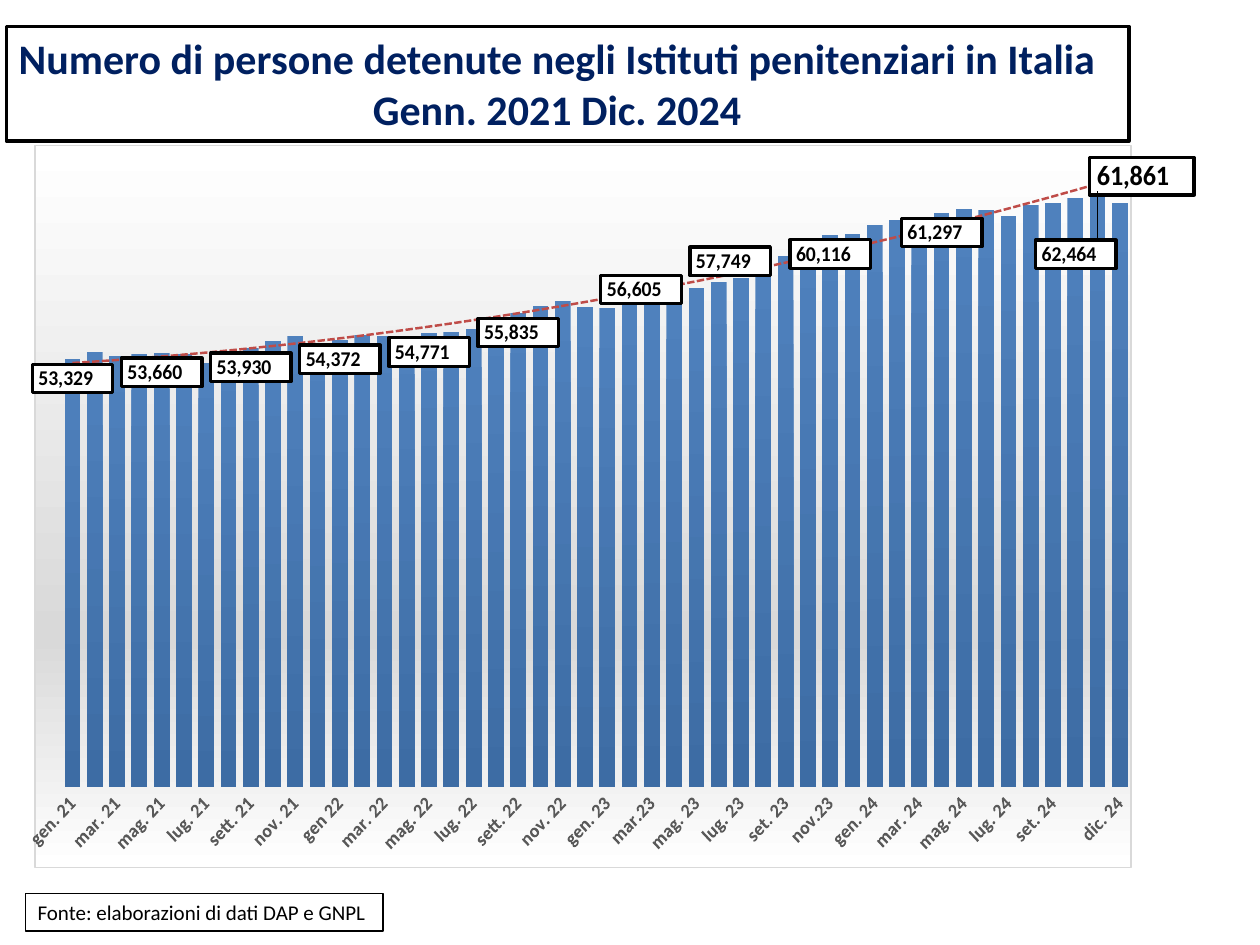
"""Build a slide charting the prison population in Italy, 2021 to 2024."""
from dataclasses import dataclass

from lxml.etree import _Element as Element
from pptx import Presentation
from pptx.chart.chart import Chart
from pptx.chart.data import CategoryChartData
from pptx.dml.color import RGBColor
from pptx.enum.chart import XL_CHART_TYPE as ChartType
from pptx.enum.chart import XL_LABEL_POSITION as LabelPos
from pptx.enum.chart import XL_TICK_MARK as Tick
from pptx.enum.shapes import MSO_SHAPE as Shape
from pptx.enum.text import MSO_ANCHOR as Anchor
from pptx.enum.text import MSO_AUTO_SIZE as AutoSize
from pptx.enum.text import PP_ALIGN as Align
from pptx.oxml import parse_xml
from pptx.oxml.ns import nsdecls, qn
from pptx.util import Pt

FONT = "Calibri"
NUMBER_FORMAT = r'_-* #,##0\ _€_-;\-* #,##0\ _€_-;_-* "-"?'
NS = nsdecls("a", "c")

MONTHS = {
    0: "gen. 21", 2: "mar. 21", 4: "mag. 21", 6: "lug. 21", 8: "sett. 21", 10: "nov. 21",
    12: "gen 22", 14: "mar. 22", 16: "mag. 22", 18: "lug. 22", 20: "sett. 22", 22: "nov. 22",
    24: "gen. 23", 26: "mar.23", 28: "mag. 23", 30: "lug. 23", 32: "set. 23", 34: "nov.23",
    36: "gen. 24", 38: "mar. 24", 40: "mag. 24", 42: "lug. 24", 44: "set. 24", 47: "dic. 24",
}
DETAINED = [
    53329, 53697, 53509, 53608, 53660, 53637, 53129, 53557, 53930, 54307, 54593, 54134,
    54372, 54635, 54609, 54595, 54771, 54841, 54979, 55637, 55835, 56225, 56524, 56196,
    56127, 56319, 56605, 56674, 57230, 57525, 57749, 58428, 58987, 59715, 60116, 60166,
    60637, 60924, 61049, 61297, 61547, 61480, 61133, 61758, 61862, 62110, 62464, 61861,
]


@dataclass
class Label:
    idx: int
    dx: float = 0
    dy: float = 0
    size: int = 12


@dataclass
class Box:
    left: float
    top: float
    width: float
    height: float
    lines: list[str]
    size: int
    color: str
    bold: bool
    border: float


LABELS = [Label(i) for i in (0, 4, 8, 12, 16, 20, 34, 39)] + [
    Label(26, -0.01, -0.04),
    Label(30, -0.01, -0.05),
    Label(46, -0.02, 0.06),
    Label(47, 0.02, -0.07, 16),
]
BOXES = [
    Box(3.6, 15.1, 641.5, 65.5,
        ["Numero di persone detenute negli Istituti penitenziari in Italia",
         "Genn. 2021 Dic. 2024"], 24, "002060", True, 2),
    Box(14.4, 510.5, 204.5, 21.6,
        ["Fonte: elaborazioni di dati DAP e GNPL"], 12, "000000", False, 0.75),
]


def rgb(color: str) -> RGBColor:
    return RGBColor.from_string(color)


def solid(color: str) -> str:
    return f'<a:solidFill><a:srgbClr val="{color}"/></a:solidFill>'


def line(color: str, width: float, extra: str = "") -> str:
    return f'<a:ln w="{Pt(width)}">{solid(color)}{extra}</a:ln>'


def gradient(*stops: tuple[int, str]) -> str:
    gs = "".join(f'<a:gs pos="{pos * 1000}"><a:srgbClr val="{color}"/></a:gs>'
                 for pos, color in stops)
    return f'<a:gradFill><a:gsLst>{gs}</a:gsLst><a:lin ang="5400000" scaled="0"/></a:gradFill>'


def sp_pr(content: str) -> Element:
    return parse_xml(f"<c:spPr {NS}>{content}</c:spPr>")


def label_xml(idx: int, label: Label | None) -> Element:
    if label is None:
        body = '<c:delete val="1"/>'
    else:
        layout = ""
        if label.dx or label.dy:
            layout = (f'<c:layout><c:manualLayout><c:x val="{label.dx}"/>'
                      f'<c:y val="{label.dy}"/></c:manualLayout></c:layout>')
        shows = "".join(f'<c:show{part} val="{int(part == "Val")}"/>' for part in
                        ("LegendKey", "Val", "CatName", "SerName", "Percent", "BubbleSize"))
        body = (f'{layout}<c:spPr>{solid("FFFFFF")}{line("000000", 2)}</c:spPr>'
                f'<c:txPr><a:bodyPr/><a:p><a:pPr><a:defRPr sz="{label.size * 100}" b="1">'
                f'{solid("000000")}<a:latin typeface="{FONT}"/></a:defRPr></a:pPr></a:p></c:txPr>'
                f'<c:dLblPos val="inEnd"/>{shows}')
    return parse_xml(f'<c:dLbl {NS}><c:idx val="{idx}"/>{body}</c:dLbl>')


def style_series(chart: Chart) -> None:
    series = chart.plots[0].series[0]
    ser = series._element
    ser.get_or_add_spPr().append(parse_xml(
        gradient((0, "4F81BD"), (100, "3D6CA4")).replace("<a:gradFill", f"<a:gradFill {NS}", 1)))
    labels = series.data_labels
    labels.show_value = True
    labels.position = LabelPos.INSIDE_END
    labels.number_format = NUMBER_FORMAT
    labels.number_format_is_linked = False
    labels.font.size = Pt(12)
    labels.font.bold = True
    shown = {label.idx: label for label in LABELS}
    for idx in range(len(DETAINED)):
        labels._element.insert(idx, label_xml(idx, shown.get(idx)))
    dash = '<a:prstDash val="sysDash"/>'
    ser.find(qn("c:cat")).addprevious(parse_xml(
        f'<c:trendline {NS}><c:spPr>{line("BF4C48", 1.5, dash)}</c:spPr>'
        '<c:trendlineType val="poly"/><c:order val="2"/>'
        '<c:dispRSqr val="0"/><c:dispEq val="0"/></c:trendline>'))


def style_axes(chart: Chart) -> None:
    value, category = chart.value_axis, chart.category_axis
    value.minimum_scale, value.maximum_scale = 30000, 65000
    value.has_major_gridlines = False
    value.visible = False
    category.major_tick_mark = Tick.NONE
    category.format.line.fill.background()
    font = category.tick_labels.font
    font.name, font.size, font.bold = FONT, Pt(11), True
    font.color.rgb = rgb("595959")
    category._element.find(qn("c:txPr")).find(qn("a:bodyPr")).set("rot", "-2700000")
    category._element.find(qn("c:noMultiLvlLbl")).addprevious(
        parse_xml(f'<c:tickLblSkip {NS} val="1"/>'))


def add_population_chart(shapes) -> None:
    data = CategoryChartData(number_format=NUMBER_FORMAT)
    data.categories = [MONTHS.get(i, "") for i in range(len(DETAINED))]
    data.add_series("Series 1", DETAINED)
    chart = shapes.add_chart(ChartType.COLUMN_CLUSTERED, Pt(14.4), Pt(82.8),
                             Pt(668.9), Pt(413.3), data).chart
    chart.has_legend = chart.has_title = False
    chart.font.name, chart.font.size = FONT, Pt(11)
    chart.font.color.rgb = rgb("000000")
    plot = chart.plots[0]
    plot.gap_width = 41
    plot.vary_by_categories = False
    style_axes(chart)
    style_series(chart)
    root = chart._chartSpace.find(qn("c:chart"))
    root.addnext(sp_pr(gradient((0, "FFFFFF"), (68, "D9D9D9"), (100, "FFFFFF"))
                       + line("D9D9D9", 0.75)))
    area = root.find(qn("c:plotArea"))
    for old in area.findall(qn("c:layout")):
        area.remove(old)
    area.insert(0, parse_xml(
        f'<c:layout {NS}><c:manualLayout><c:layoutTarget val="inner"/>'
        '<c:xMode val="edge"/><c:yMode val="edge"/><c:x val="0.024"/><c:y val="0"/>'
        '<c:w val="0.976"/><c:h val="0.888"/></c:manualLayout></c:layout>'))


def add_box(shapes, box: Box) -> None:
    s = shapes.add_shape(Shape.RECTANGLE, Pt(box.left), Pt(box.top), Pt(box.width), Pt(box.height))
    s.shadow.inherit = False
    s.fill.solid()
    s.fill.fore_color.rgb = rgb("FFFFFF")
    s.line.color.rgb = rgb("000000")
    s.line.width = Pt(box.border)
    tf = s.text_frame
    tf.word_wrap = False
    tf.auto_size = AutoSize.SHAPE_TO_FIT_TEXT
    tf.vertical_anchor = Anchor.TOP
    for i, text in enumerate(box.lines):
        p = tf.add_paragraph() if i else tf.paragraphs[0]
        p.text = text
        p.alignment = Align.CENTER if i else Align.LEFT
        p.font.name, p.font.size, p.font.bold = FONT, Pt(box.size), box.bold
        p.font.color.rgb = rgb(box.color)


def main() -> None:
    prs = Presentation()
    prs.slide_width, prs.slide_height = Pt(720), Pt(540)
    shapes = prs.slides.add_slide(prs.slide_layouts[6]).shapes
    add_population_chart(shapes)
    for box in BOXES:
        add_box(shapes, box)
    prs.save("out.pptx")


if __name__ == "__main__":
    main()
